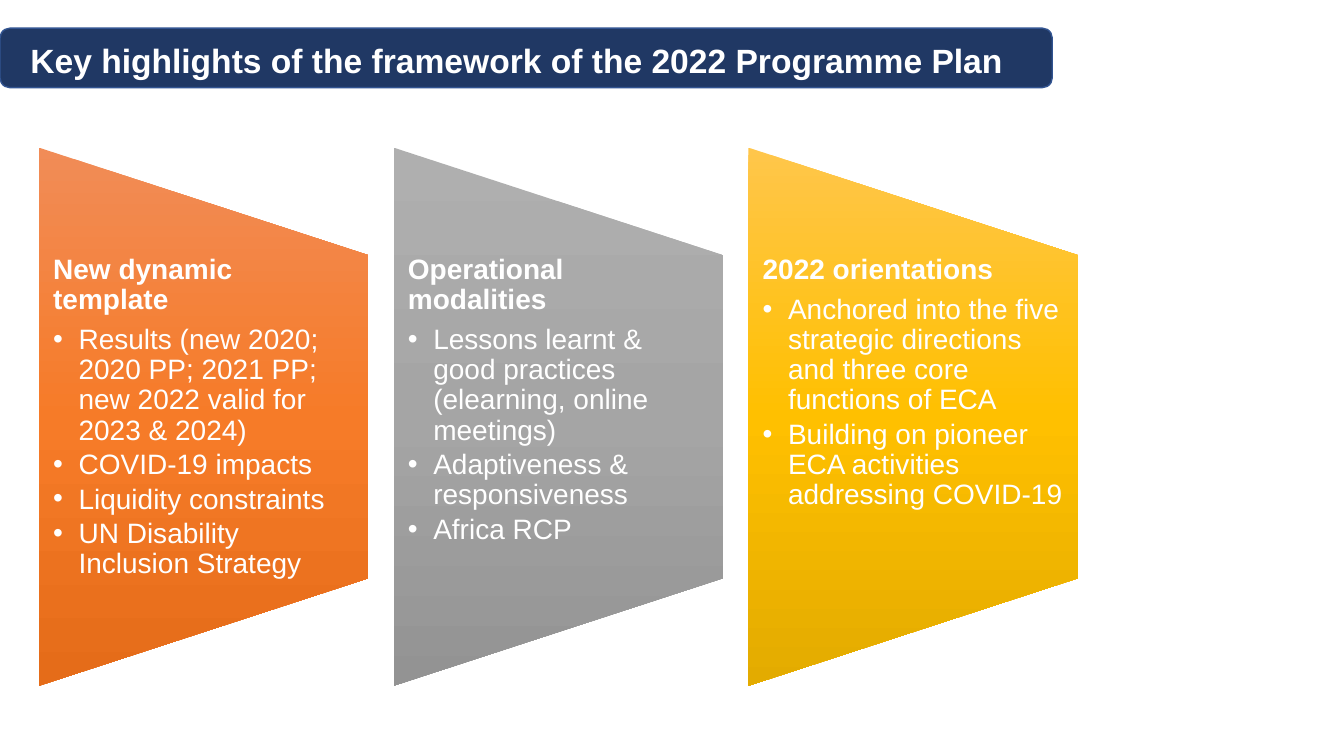
import copy

import lxml.etree
import pptx
import pptx.dml.color
import pptx.enum.shapes
import pptx.enum.text
import pptx.oxml.ns
import pptx.util

Cm = pptx.util.Cm
Pt = pptx.util.Pt
RGBColor = pptx.dml.color.RGBColor
SHAPES = pptx.enum.shapes.MSO_SHAPE
qn = pptx.oxml.ns.qn

WHITE = RGBColor(0xFF, 0xFF, 0xFF)
NAVY = RGBColor(0x20, 0x38, 0x64)
BLUE = RGBColor(0x32, 0x54, 0x91)
ORANGES = [RGBColor(0xF1, 0x8C, 0x57), RGBColor(0xF6, 0x7B, 0x28), RGBColor(0xE5, 0x6C, 0x19)]
GREYS = [RGBColor(0xAF, 0xAF, 0xAF), RGBColor(0xA5, 0xA5, 0xA5), RGBColor(0x93, 0x93, 0x93)]
GOLDS = [RGBColor(0xFF, 0xC6, 0x4B), RGBColor(0xFF, 0xC0, 0x00), RGBColor(0xE3, 0xAB, 0x00)]

FONT = "Arial"
TITLE = "Key highlights of the framework of the 2022 Programme Plan"
PANELS = [
    ("New dynamic template", ORANGES, [
        "Results (new 2020; 2020 PP; 2021 PP; new 2022 valid for 2023 & 2024)",
        "COVID-19 impacts",
        "Liquidity constraints",
        "UN Disability Inclusion Strategy",
    ]),
    ("Operational modalities", GREYS, [
        "Lessons learnt & good practices (elearning, online meetings)",
        "Adaptiveness & responsiveness",
        "Africa RCP",
    ]),
    ("2022 orientations", GOLDS, [
        "Anchored into the five strategic directions and three core functions of ECA",
        "Building on pioneer ECA activities addressing COVID-19",
    ]),
]
PANEL_LEFT = 0.98
PANEL_PITCH = 8.94
PANEL_WIDTH = 8.31
PANEL_HEIGHT = 13.56
PANEL_MIDDLE = 10.5
TEXT_HEIGHT = 8.15


def style_font(para, size, bold):
    para.font.name = FONT
    para.font.size = Pt(size)
    para.font.bold = bold
    para.font.color.rgb = WHITE


def add_title(page):
    bar = page.shapes.add_shape(SHAPES.ROUNDED_RECTANGLE, 0, Cm(0.71), Cm(26.52), Cm(1.5))
    bar.shadow.inherit = False
    bar.fill.solid()
    bar.fill.fore_color.rgb = NAVY
    bar.line.color.rgb = BLUE
    bar.line.width = Pt(1)
    page.shapes.element.insert(2, bar.element)

    title = page.shapes.title
    title.left, title.top, title.width, title.height = Cm(0.51), Cm(0.89), Cm(25.5), Cm(1.27)
    frame = title.text_frame
    frame.text = TITLE
    frame.word_wrap = True
    frame.auto_size = pptx.enum.text.MSO_AUTO_SIZE.NONE
    frame.vertical_anchor = pptx.enum.text.MSO_ANCHOR.TOP
    frame.paragraphs[0].alignment = pptx.enum.text.PP_ALIGN.LEFT
    style_font(frame.paragraphs[0], 24, True)


def fill_gradient(shape, colours):
    shape.fill.gradient()
    shape.fill.gradient_angle = 270
    gradient = shape.element.spPr.find(qn("a:gradFill"))
    gradient.set("rotWithShape", "0")
    stops = gradient.find(qn("a:gsLst"))
    stops.insert(1, copy.deepcopy(stops[0]))
    for stop, colour, position in zip(shape.fill.gradient_stops, colours, (0, 0.5, 1)):
        stop.color.rgb = colour
        stop.position = position


def add_panel_shape(page, left, colours):
    panel = page.shapes.add_shape(
        SHAPES.FLOWCHART_MANUAL_OPERATION,
        Cm(left + (PANEL_WIDTH - PANEL_HEIGHT) / 2), Cm(PANEL_MIDDLE - PANEL_WIDTH / 2),
        Cm(PANEL_HEIGHT), Cm(PANEL_WIDTH))
    panel.rotation = 270
    panel.shadow.inherit = False
    panel.line.fill.background()
    fill_gradient(panel, colours)


def add_bullet(para):
    properties = para._p.get_or_add_pPr()
    properties.set("marL", str(Cm(0.64)))
    properties.set("indent", str(-Cm(0.64)))
    lxml.etree.SubElement(properties, qn("a:buFont"), typeface=FONT)
    lxml.etree.SubElement(properties, qn("a:buChar"), char="•")


def add_panel_text(page, left, heading, points):
    box = page.shapes.add_textbox(
        Cm(left), Cm(PANEL_MIDDLE - TEXT_HEIGHT / 2), Cm(PANEL_WIDTH), Cm(TEXT_HEIGHT))
    frame = box.text_frame
    frame.word_wrap = True
    frame.margin_left = frame.margin_right = Cm(0.36)
    frame.margin_top = frame.margin_bottom = 0
    for index, text in enumerate([heading] + points):
        para = frame.add_paragraph() if index else frame.paragraphs[0]
        para.text = text
        if index:
            add_bullet(para)
        para.line_spacing = 0.9
        para.space_after = Pt(3 if index else 7)
        style_font(para, 20, index == 0)


def main():
    deck = pptx.Presentation()
    deck.slide_width, deck.slide_height = Cm(33.87), Cm(19.05)
    page = deck.slides.add_slide(deck.slide_layouts.get_by_name("Title Only"))
    add_title(page)
    for index, (heading, colours, points) in enumerate(PANELS):
        left = PANEL_LEFT + index * PANEL_PITCH
        add_panel_shape(page, left, colours)
        add_panel_text(page, left, heading, points)
    deck.save("out.pptx")


if __name__ == "__main__":
    main()
